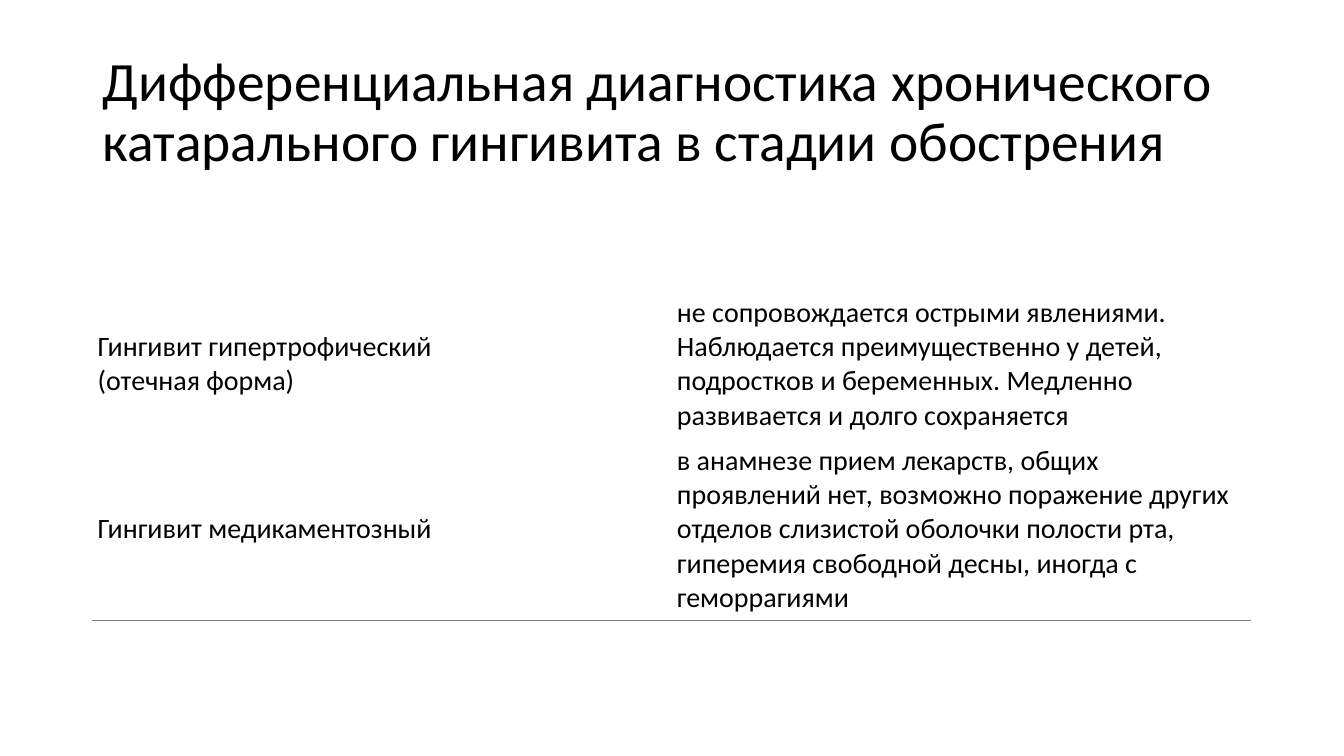
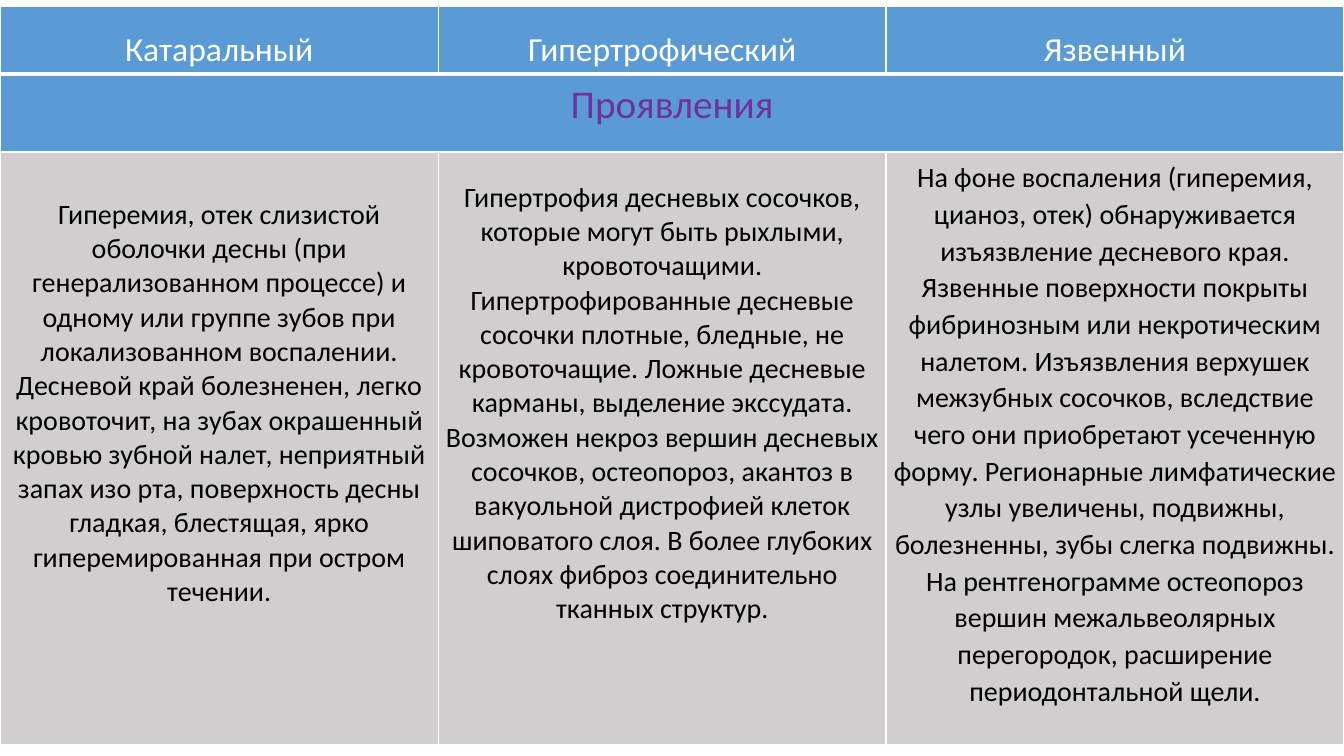
from dataclasses import dataclass

import lxml.etree
import pptx
import pptx.dml.color
import pptx.enum.text
import pptx.oxml.ns
import pptx.util
from pptx.util import Cm

COLORS = {
    "text": "000000",
    "white": "FFFFFF",
    "rule": "808080",
    "heading": "5B9BD5",
    "accent": "7030A0",
    "body": "D0CECE",
}
FONT = "Calibri"
MIDDLE = pptx.enum.text.MSO_ANCHOR.MIDDLE
TOP = pptx.enum.text.MSO_ANCHOR.TOP
BOTTOM = pptx.enum.text.MSO_ANCHOR.BOTTOM
LEFT = pptx.enum.text.PP_ALIGN.LEFT
CENTER = pptx.enum.text.PP_ALIGN.CENTER

SLIDE_WIDTH, SLIDE_HEIGHT = Cm(33.87), Cm(19.05)
CONTENT_LEFT, CONTENT_WIDTH = Cm(2.33), Cm(29.2)
DIAGNOSIS_COLUMNS = (CONTENT_WIDTH // 2,) * 2
FORM_COLUMNS = (Cm(11.05), Cm(11.28), Cm(11.54))


@dataclass(frozen=True)
class CellStyle:
    fill: str
    size: float
    color: str
    anchor: pptx.enum.text.MSO_ANCHOR
    align: pptx.enum.text.PP_ALIGN
    borders: dict[str, tuple[str, float]]
    side: float = 0.08
    top: float = 0.08
    bottom: float = 0.08
    line_spacing: float = 1.0


@dataclass(frozen=True)
class TableRow:
    height: float
    texts: tuple[str, ...]
    styles: tuple[CellStyle, ...]


GRID = {side: ("white", 1) for side in "LRTB"}
DIAGNOSIS = CellStyle("white", 20, "text", MIDDLE, LEFT, {"B": ("rule", 0.75)},
                      side=0.13, top=0.13, bottom=0.13)
FORM_NAME = CellStyle("heading", 24, "white", BOTTOM, CENTER,
                      GRID | {"B": ("white", 3)}, line_spacing=1.07)
SIGNS_HEADING = CellStyle("heading", 28, "accent", TOP, CENTER, GRID, line_spacing=1.07)
SIGNS = CellStyle("body", 20, "text", MIDDLE, CENTER, GRID, bottom=2.35)
ULCER_SIGNS = CellStyle("body", 20, "text", TOP, CENTER, GRID, top=0.17, line_spacing=1.07)

DIAGNOSIS_ROWS = (
    TableRow(3.73, (
        "Гингивит гипертрофический\n(отечная форма)",
        "не сопровождается острыми явлениями. Наблюдается преимущественно у детей, "
        "подростков и беременных. Медленно развивается и долго сохраняется",
    ), (DIAGNOSIS,) * 2),
    TableRow(4.59, (
        "Гингивит медикаментозный",
        "в анамнезе прием лекарств, общих проявлений нет, возможно поражение других "
        "отделов слизистой оболочки полости рта, гиперемия свободной десны, иногда с "
        "геморрагиями",
    ), (DIAGNOSIS,) * 2),
)
SIGNS_ROWS = (
    TableRow(1.95, ("Проявления",), (SIGNS_HEADING,)),
    TableRow(14.94, (
        "Гиперемия, отек слизистой оболочки десны (при генерализованном процессе) и "
        "одному или группе зубов при локализованном воспалении. Десневой край болезненен, "
        "легко кровоточит, на зубах окрашенный кровью зубной налет, неприятный запах изо "
        "рта, поверхность десны гладкая, блестящая, ярко гиперемированная при остром "
        "течении.",
        "Гипертрофия десневых сосочков, которые могут быть рыхлыми, кровоточащими. "
        "Гипертрофированные десневые сосочки плотные, бледные, не кровоточащие. Ложные "
        "десневые карманы, выделение экссудата. Возможен некроз вершин десневых сосочков, "
        "остеопороз, акантоз в вакуольной дистрофией клеток шиповатого слоя. В более "
        "глубоких слоях фиброз соединительно тканных структур.",
        "На фоне воспаления (гиперемия, цианоз, отек) обнаруживается изъязвление десневого "
        "края. Язвенные поверхности покрыты фибринозным или некротическим налетом. "
        "Изъязвления верхушек межзубных сосочков, вследствие чего они приобретают усеченную "
        "форму. Регионарные лимфатические узлы увеличены, подвижны, болезненны, зубы слегка "
        "подвижны. На рентгенограмме остеопороз вершин межальвеолярных перегородок, "
        "расширение периодонтальной щели.",
    ), (SIGNS, SIGNS, ULCER_SIGNS)),
)
FORM_ROWS = (
    TableRow(1.7, ("Катаральный", "Гипертрофический", "Язвенный"), (FORM_NAME,) * 3),
)


def rgb(name: str) -> pptx.dml.color.RGBColor:
    return pptx.dml.color.RGBColor.from_string(COLORS[name])


def format_paragraph(paragraph, size: float, color: str,
                     align: pptx.enum.text.PP_ALIGN, line_spacing: float) -> None:
    paragraph.alignment = align
    paragraph.line_spacing = line_spacing
    paragraph.font.name = FONT
    paragraph.font.size = pptx.util.Pt(size)
    paragraph.font.color.rgb = rgb(color)


def draw_borders(cell, borders: dict[str, tuple[str, float]]) -> None:
    qn = pptx.oxml.ns.qn
    properties = cell._tc.get_or_add_tcPr()
    for side in "LRTB":
        border = lxml.etree.SubElement(properties, qn(f"a:ln{side}"))
        if side not in borders:
            lxml.etree.SubElement(border, qn("a:noFill"))
            continue
        color, width = borders[side]
        border.set("w", str(int(pptx.util.Pt(width))))
        fill = lxml.etree.SubElement(border, qn("a:solidFill"))
        lxml.etree.SubElement(fill, qn("a:srgbClr"), val=COLORS[color])


def style_cell(cell, style: CellStyle) -> None:
    draw_borders(cell, style.borders)
    cell.fill.solid()
    cell.fill.fore_color.rgb = rgb(style.fill)
    cell.vertical_anchor = style.anchor
    cell.margin_left = cell.margin_right = Cm(style.side)
    cell.margin_top, cell.margin_bottom = Cm(style.top), Cm(style.bottom)
    format_paragraph(cell.text_frame.paragraphs[0], style.size, style.color,
                     style.align, style.line_spacing)


def add_grid(slide, left: int, top: int, widths: tuple[int, ...],
             rows: tuple[TableRow, ...]) -> None:
    height = sum(Cm(row.height) for row in rows)
    table = slide.shapes.add_table(len(rows), len(widths), left, top,
                                   sum(widths), height).table
    table.first_row = table.horz_banding = False
    for column, width in zip(table.columns, widths):
        column.width = width
    for index, row in enumerate(rows):
        table.rows[index].height = Cm(row.height)
        cells = list(table.rows[index].cells)
        if len(row.texts) == 1:
            cells[0].merge(cells[-1])
        for cell, text in zip(cells, row.texts):
            cell.text_frame.paragraphs[0].text = text
        for position, cell in enumerate(cells):
            style_cell(cell, row.styles[min(position, len(row.styles) - 1)])


def add_title(slide, text: str) -> None:
    title = slide.shapes.title
    title.left, title.top = CONTENT_LEFT, Cm(1.01)
    title.width, title.height = CONTENT_WIDTH, Cm(3.68)
    frame = title.text_frame
    frame.text = text
    frame.word_wrap = True
    frame.auto_size = pptx.enum.text.MSO_AUTO_SIZE.NONE
    frame.vertical_anchor = MIDDLE
    format_paragraph(frame.paragraphs[0], 39.6, "text", LEFT, 0.9)


def main() -> None:
    deck = pptx.Presentation()
    deck.slide_width, deck.slide_height = SLIDE_WIDTH, SLIDE_HEIGHT
    title_only, blank = deck.slide_layouts[5], deck.slide_layouts[6]

    diagnosis = deck.slides.add_slide(title_only)
    add_title(diagnosis, "Дифференциальная диагностика хронического катарального "
                         "гингивита в стадии обострения")
    add_grid(diagnosis, CONTENT_LEFT, Cm(7.31), DIAGNOSIS_COLUMNS, DIAGNOSIS_ROWS)

    forms = deck.slides.add_slide(blank)
    add_grid(forms, 0, Cm(1.88), FORM_COLUMNS, SIGNS_ROWS)
    add_grid(forms, 0, Cm(0.16), FORM_COLUMNS, FORM_ROWS)

    deck.save("out.pptx")


if __name__ == "__main__":
    main()
